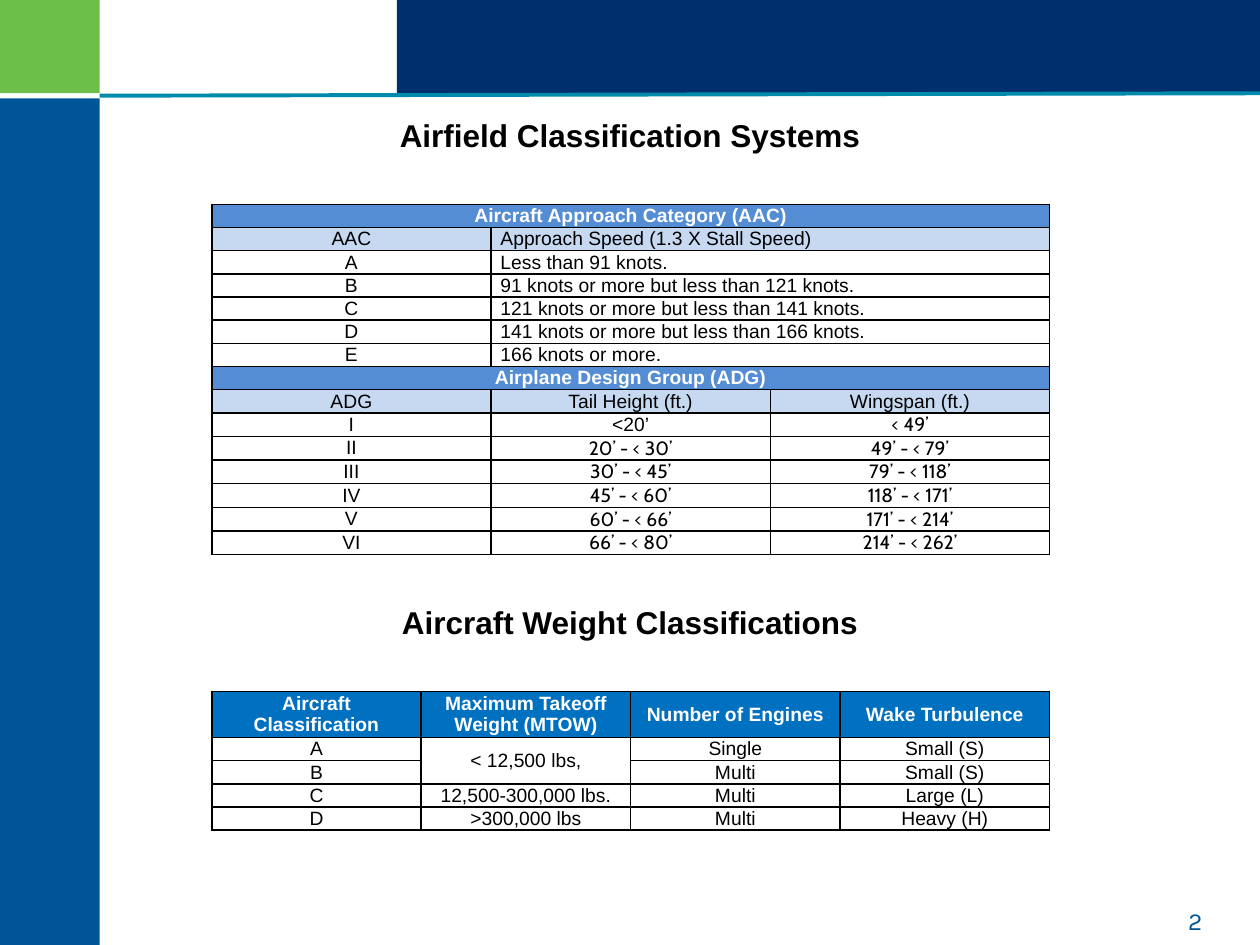
from dataclasses import dataclass
from typing import Optional

from lxml.etree import SubElement
from pptx import Presentation
from pptx.dml.color import RGBColor
from pptx.enum.shapes import MSO_CONNECTOR, MSO_SHAPE
from pptx.enum.text import MSO_ANCHOR, MSO_AUTO_SIZE, PP_ALIGN
from pptx.oxml.ns import qn
from pptx.util import Pt

NAVY = RGBColor(0x00, 0x2F, 0x6D)
BLUE = RGBColor(0x00, 0x55, 0x96)
GREEN = RGBColor(0x6C, 0xC0, 0x4A)
TEAL = RGBColor(0x00, 0x8A, 0xAB)
HEADER_BLUE = RGBColor(0x54, 0x8D, 0xD4)
PALE_BLUE = RGBColor(0xC6, 0xD9, 0xF1)
WEIGHT_BLUE = RGBColor(0x00, 0x70, 0xC0)
BLACK = RGBColor(0, 0, 0)
WHITE = RGBColor(255, 255, 255)

TABLE_LEFT = 121
TABLE_WIDTH = 478.8
ROW = 12.3
TALL_ROW = 13.5


@dataclass
class Band:
    left: float
    top: float
    width: float
    height: float
    color: RGBColor


@dataclass
class Row:
    texts: tuple[str, ...]
    height: float = ROW
    fill: Optional[RGBColor] = None
    heading: bool = False
    fonts: tuple[str, ...] = ("Arial",) * 4
    last_align: PP_ALIGN = PP_ALIGN.CENTER


BANDS = [
    Band(226.8, -0.7, 493.2, 54, NAVY),
    Band(0, 56.2, 56.9, 486, BLUE),
    Band(0, -0.7, 56.9, 54, GREEN),
]

SPEEDS = [
    ("A", "Less than 91 knots."),
    ("B", "91 knots or more but less than 121 knots."),
    ("C", "121 knots or more but less than 141 knots."),
    ("D", "141 knots or more but less than 166 knots."),
    ("E", "166 knots or more."),
]
GROUPS = [
    ("II", "20’ - < 30’", "49’ - < 79’"),
    ("III", "30’ - < 45’", "79’ - < 118’"),
    ("IV", "45’ - < 60’", "118’ - < 171’"),
    ("V", "60’ - < 66’", "171’ - < 214’"),
    ("VI", "66’ - < 80’", "214’ - < 262’"),
]
AIRFIELD_ROWS = [
    Row(("Aircraft Approach Category (AAC)",), fill=HEADER_BLUE, heading=True),
    Row(("AAC", "Approach Speed (1.3 X Stall Speed)"), fill=PALE_BLUE,
        last_align=PP_ALIGN.JUSTIFY),
    *[Row(speed, last_align=PP_ALIGN.JUSTIFY) for speed in SPEEDS],
    Row(("Airplane Design Group (ADG)",), fill=HEADER_BLUE, heading=True),
    Row(("ADG", "Tail Height (ft.)", "Wingspan (ft.)"), fill=PALE_BLUE),
    Row(("I", "<20’", "< 49’"), TALL_ROW, fonts=("Arial", "Arial", "Cabin")),
    *[Row(group, TALL_ROW, fonts=("Arial", "Cabin", "Cabin")) for group in GROUPS],
]
WEIGHT_ROWS = [
    Row(("Aircraft Classification", "Maximum Takeoff Weight (MTOW)",
         "Number of Engines", "Wake Turbulence"), 2 * ROW, WEIGHT_BLUE, True),
    Row(("A", "< 12,500 lbs,", "Single", "Small (S)")),
    Row(("B", "", "Multi", "Small (S)")),
    Row(("C", "12,500-300,000 lbs.", "Multi", "Large (L)")),
    Row(("D", ">300,000 lbs", "Multi", "Heavy (H)")),
]


def draw_band(slide, band: Band) -> None:
    sp = slide.shapes.add_shape(MSO_SHAPE.RECTANGLE, Pt(band.left), Pt(band.top),
                                Pt(band.width), Pt(band.height))
    sp.shadow.inherit = False
    sp.fill.solid()
    sp.fill.fore_color.rgb = band.color
    sp.line.fill.background()


def draw_rule(slide) -> None:
    line = slide.shapes.add_connector(MSO_CONNECTOR.STRAIGHT,
                                      Pt(56.9), Pt(54.7), Pt(720), Pt(53.3))
    line.line.color.rgb = TEAL
    line.line.width = Pt(2.25)
    SubElement(line._element.spPr, qn("a:effectLst"))


def set_font(p, name: str, size: float, color: RGBColor, bold: bool) -> None:
    p.font.name = name
    p.font.size = Pt(size)
    p.font.color.rgb = color
    p.font.bold = bold


def format_heading(sp, text: str, top: float) -> None:
    sp.left, sp.top, sp.width, sp.height = Pt(220), Pt(top), Pt(280), Pt(29)
    tf = sp.text_frame
    tf.text = text
    tf.word_wrap = False
    tf.auto_size = MSO_AUTO_SIZE.SHAPE_TO_FIT_TEXT
    tf.vertical_anchor = MSO_ANCHOR.TOP
    p = tf.paragraphs[0]
    p.alignment = PP_ALIGN.CENTER
    set_font(p, "Arial", 18, BLACK, True)


def draw_page_number(slide) -> None:
    sp = slide.shapes.add_textbox(Pt(671.8), Pt(511.9), Pt(48.2), Pt(28.8))
    tf = sp.text_frame
    tf.word_wrap = True
    tf.vertical_anchor = MSO_ANCHOR.MIDDLE
    tf.text = "2"
    set_font(tf.paragraphs[0], "Karla", 14, BLUE, False)


def add_borders(cell) -> None:
    tc_pr = cell._tc.get_or_add_tcPr()
    for side in ("lnL", "lnR", "lnT", "lnB"):
        ln = SubElement(tc_pr, qn(f"a:{side}"), w=str(Pt(1)))
        fill = SubElement(ln, qn("a:solidFill"))
        SubElement(fill, qn("a:srgbClr"), val=str(BLACK))


def format_cell(cell, row: Row) -> None:
    add_borders(cell)
    cell.margin_left = cell.margin_right = Pt(5.4)
    cell.margin_top = cell.margin_bottom = 0
    cell.vertical_anchor = MSO_ANCHOR.MIDDLE
    if row.fill is None:
        cell.fill.background()
    else:
        cell.fill.solid()
        cell.fill.fore_color.rgb = row.fill
    set_font(cell.text_frame.paragraphs[0], "Arial", 11,
             WHITE if row.heading else BLACK, row.heading)


def draw_table(slide, top: float, columns: int, rows: list[Row]):
    height = sum(row.height for row in rows)
    table = slide.shapes.add_table(len(rows), columns, Pt(TABLE_LEFT), Pt(top),
                                   Pt(TABLE_WIDTH), Pt(height)).table
    table.first_row = table.horz_banding = False
    for column in table.columns:
        column.width = Pt(TABLE_WIDTH / columns)
    for i, row in enumerate(rows):
        table.rows[i].height = Pt(row.height)
        for j in range(columns):
            cell = table.cell(i, j)
            cell.text = row.texts[j] if j < len(row.texts) else ""
            format_cell(cell, row)
            p = cell.text_frame.paragraphs[0]
            p.font.name = row.fonts[j]
            p.alignment = PP_ALIGN.CENTER
        last = len(row.texts) - 1
        table.cell(i, last).text_frame.paragraphs[0].alignment = row.last_align
        if last < columns - 1:
            table.cell(i, last).merge(table.cell(i, columns - 1))
    return table


def main() -> None:
    prs = Presentation()
    prs.slide_width, prs.slide_height = Pt(720), Pt(540)
    s = prs.slides.add_slide(prs.slide_layouts[5])
    for band in BANDS:
        draw_band(s, band)
    draw_rule(s)
    draw_page_number(s)
    draw_table(s, 116.8, 3, AIRFIELD_ROWS)
    weights = draw_table(s, 395, 4, WEIGHT_ROWS)
    weights.cell(1, 1).merge(weights.cell(2, 1))
    format_heading(s.shapes.title, "Airfield Classification Systems", 62.6)
    subtitle = s.shapes.add_textbox(0, 0, Pt(280), Pt(29))
    format_heading(subtitle, "Aircraft Weight Classifications", 340.8)
    prs.save("out.pptx")


if __name__ == "__main__":
    main()
